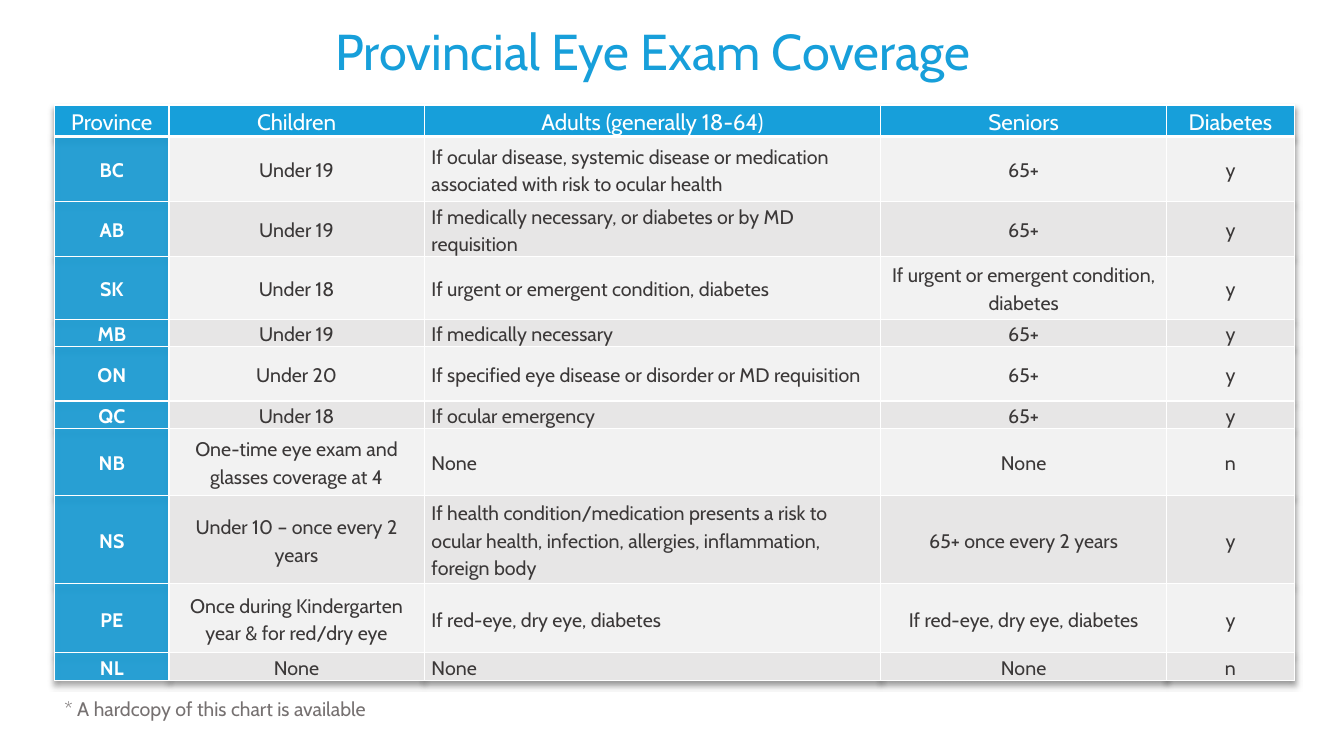
from dataclasses import dataclass

from lxml.etree import SubElement
from pptx import Presentation
from pptx.dml.color import RGBColor
from pptx.enum.text import MSO_ANCHOR, MSO_AUTO_SIZE, PP_ALIGN
from pptx.oxml import parse_xml
from pptx.oxml.ns import nsdecls, qn
from pptx.shapes.base import BaseShape
from pptx.slide import Slide
from pptx.table import Table, _Cell
from pptx.text.text import _Paragraph
from pptx.util import Emu, Pt

FONT = "Cabin"
BLUE = RGBColor(0x17, 0x9F, 0xDA)
WHITE = RGBColor(0xFF, 0xFF, 0xFF)
CHARCOAL = RGBColor(0x3B, 0x38, 0x38)
GRAY = RGBColor(0x76, 0x71, 0x71)
LIGHT_BAND = RGBColor(0xF2, 0xF2, 0xF2)
DARK_BAND = RGBColor(0xE7, 0xE6, 0xE6)

PROVINCE_COLUMN = 0
ADULTS_COLUMN = 2
PROVINCE_OPACITY = 88
HEADINGS = ("Province", "Children", "Adults (generally 18-64)", "Seniors", "Diabetes")
COLUMN_WIDTHS = (109, 243, 435, 272, 122)
HEADER_HEIGHT = 30


@dataclass(frozen=True)
class Coverage:
    height: int
    province: str
    children: str
    adults: str
    seniors: str
    diabetes: str

    def texts(self) -> tuple[str, ...]:
        return self.province, self.children, self.adults, self.seniors, self.diabetes


@dataclass(frozen=True)
class CellStyle:
    size: int
    color: RGBColor
    fill: RGBColor
    bold: bool = False
    opacity: int = 100
    align: PP_ALIGN = PP_ALIGN.CENTER
    anchor: MSO_ANCHOR = MSO_ANCHOR.MIDDLE
    top_border: int = 1
    bottom_border: int = 1


COVERAGES = (
    Coverage(62, "BC", "Under 19",
             "If ocular disease, systemic disease or medication associated with risk to ocular health",
             "65+", "y"),
    Coverage(52, "AB", "Under 19", "If medically necessary, or diabetes or by MD requisition", "65+", "y"),
    Coverage(60, "SK", "Under 18", "If urgent or emergent condition, diabetes",
             "If urgent or emergent condition, diabetes", "y"),
    Coverage(26, "MB", "Under 19", "If medically necessary", "65+", "y"),
    Coverage(52, "ON", "Under 20", "If specified eye disease or disorder or MD requisition", "65+", "y"),
    Coverage(26, "QC", "Under 18", "If ocular emergency", "65+", "y"),
    Coverage(64, "NB", "One-time eye exam and glasses coverage at 4", "None", "None", "n"),
    Coverage(84, "NS", "Under 10 – once every 2 years",
             "If health condition/medication presents a risk to ocular health, infection, allergies, "
             "inflammation, foreign body",
             "65+ once every 2 years", "y"),
    Coverage(66, "PE", "Once during Kindergarten year & for red/dry eye", "If red-eye, dry eye, diabetes",
             "If red-eye, dry eye, diabetes", "y"),
    Coverage(26, "NL", "None", "None", "None", "n"),
)


def px(length: int) -> Emu:
    return Emu(length * 9525)


def add_run(paragraph: _Paragraph, text: str, size: int, color: RGBColor, bold: bool = False) -> None:
    run = paragraph.add_run()
    run.text = text
    run.font.name = FONT
    run.font.size = Pt(size)
    run.font.bold = bold
    run.font.color.rgb = color


def fill_line(shape: BaseShape, left: int, top: int, width: int, height: int,
              text: str, size: int, color: RGBColor) -> None:
    """Place a shape and give it a single unwrapped line of text."""
    shape.left, shape.top, shape.width, shape.height = px(left), px(top), px(width), px(height)
    frame = shape.text_frame
    frame.word_wrap = False
    frame.auto_size = MSO_AUTO_SIZE.SHAPE_TO_FIT_TEXT
    frame.vertical_anchor = MSO_ANCHOR.TOP
    paragraph = frame.paragraphs[0]
    paragraph.alignment = PP_ALIGN.LEFT
    add_run(paragraph, text, size, color)


def set_borders(cell: _Cell, style: CellStyle) -> None:
    properties = cell._tc.get_or_add_tcPr()
    widths = {"lnL": 1, "lnR": 1, "lnT": style.top_border, "lnB": style.bottom_border}
    for index, (tag, width) in enumerate(widths.items()):
        properties.insert(index, parse_xml(
            f'<a:{tag} {nsdecls("a")} w="{Pt(width)}"><a:solidFill>'
            f'<a:srgbClr val="{WHITE}"/></a:solidFill></a:{tag}>'))


def fill_cell(cell: _Cell, text: str, style: CellStyle) -> None:
    cell.margin_left = cell.margin_right = px(7)
    cell.margin_top = cell.margin_bottom = 0
    cell.vertical_anchor = style.anchor
    cell.fill.solid()
    cell.fill.fore_color.rgb = style.fill
    if style.opacity < 100:
        color = cell._tc.tcPr.find(f".//{qn('a:srgbClr')}")
        SubElement(color, qn("a:alpha")).set("val", str(style.opacity * 1000))
    set_borders(cell, style)
    paragraph = cell.text_frame.paragraphs[0]
    paragraph.alignment = style.align
    paragraph.line_spacing = 1.15
    paragraph.space_after = Pt(10)
    add_run(paragraph, text, style.size, style.color, style.bold)


def body_style(row: int, column: int) -> CellStyle:
    top_border = 3 if row == 1 else 1
    if column == PROVINCE_COLUMN:
        return CellStyle(14, WHITE, BLUE, bold=True, opacity=PROVINCE_OPACITY, top_border=top_border)
    band = LIGHT_BAND if row % 2 else DARK_BAND
    align = PP_ALIGN.LEFT if column == ADULTS_COLUMN else PP_ALIGN.CENTER
    return CellStyle(14, CHARCOAL, band, align=align, top_border=top_border)


def add_shadow(table: Table) -> None:
    table._tbl.tblPr.insert(0, parse_xml(
        f'<a:effectLst {nsdecls("a")}><a:outerShdw blurRad="{Pt(4)}" dist="{Pt(3)}" dir="5400000" '
        'algn="t" rotWithShape="0"><a:srgbClr val="000000"><a:alpha val="40000"/></a:srgbClr>'
        '</a:outerShdw></a:effectLst>'))


def add_coverage_table(slide: Slide) -> None:
    heights = (HEADER_HEIGHT, *(coverage.height for coverage in COVERAGES))
    table = slide.shapes.add_table(
        len(heights), len(HEADINGS), px(52), px(100), px(sum(COLUMN_WIDTHS)), px(sum(heights))).table
    table.first_row = table.horz_banding = False
    add_shadow(table)
    for column, width in zip(table.columns, COLUMN_WIDTHS):
        column.width = px(width)
    for row, height in zip(table.rows, heights):
        row.height = px(height)

    header_style = CellStyle(16, WHITE, BLUE, anchor=MSO_ANCHOR.TOP, bottom_border=3)
    for column, heading in enumerate(HEADINGS):
        fill_cell(table.cell(0, column), heading, header_style)
    for row, coverage in enumerate(COVERAGES, start=1):
        for column, text in enumerate(coverage.texts()):
            fill_cell(table.cell(row, column), text, body_style(row, column))


def main() -> None:
    presentation = Presentation()
    presentation.slide_width, presentation.slide_height = px(1280), px(720)
    slide = presentation.slides.add_slide(presentation.slide_layouts.get_by_name("Title Only"))
    fill_line(slide.shapes.title, 310, 14, 673, 68, "Provincial Eye Exam Coverage", 36, BLUE)
    add_coverage_table(slide)
    footnote = slide.shapes.add_textbox(0, 0, 0, 0)
    fill_line(footnote, 52, 659, 327, 32, "* A hardcopy of this chart is available", 14, GRAY)
    presentation.save("out.pptx")


if __name__ == "__main__":
    main()
